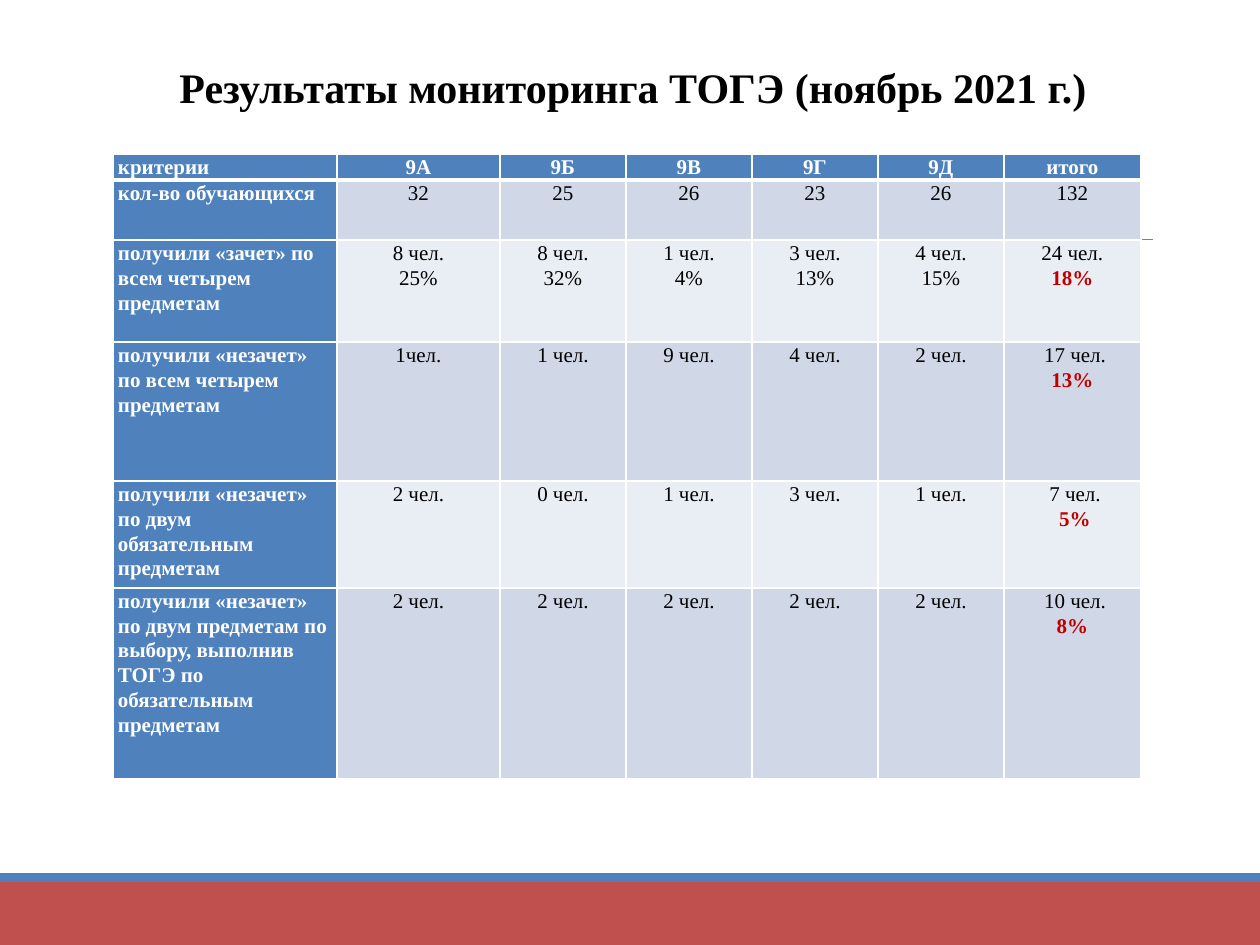
from lxml import etree
from pptx import Presentation
from pptx import util as u
from pptx.dml.color import RGBColor
from pptx.enum import shapes, text
from pptx.oxml.ns import qn

PX = 914400 / 126
FONT = "Times New Roman"
BLACK = RGBColor(0, 0, 0)
WHITE = RGBColor(255, 255, 255)
BLUE = RGBColor(0x4F, 0x81, 0xBD)
BRICK = RGBColor(0xC0, 0x50, 0x4D)
RED = RGBColor(0xC0, 0, 0)
GREY = RGBColor(0x80, 0x80, 0x80)
BANDS = [RGBColor(0xE9, 0xED, 0xF4), RGBColor(0xD0, 0xD8, 0xE8)]


def px(*lengths):
    return [u.Emu(round(n * PX)) for n in lengths]


def write(p, words, size=12, color=BLACK, bold=False, align=text.PP_ALIGN.CENTER, spacing=1.07):
    p.alignment = align
    p.line_spacing = spacing
    r = p.add_run()
    r.text = words
    r.font.name, r.font.size, r.font.bold = FONT, u.Pt(size), bold
    r.font.color.rgb = color


prs = Presentation()
prs.slide_width, prs.slide_height = px(1260, 945)
s = prs.slides.add_slide(prs.slide_layouts[5])

# Footer bars and the thin rule behind the table
for top, height, color in [(882, 63, BRICK), (873, 9, BLUE)]:
    bar = s.shapes.add_shape(shapes.MSO_SHAPE.RECTANGLE, *px(0, top, 1260, height))
    bar.shadow.inherit = False
    bar.fill.solid()
    bar.fill.fore_color.rgb = color
    bar.line.fill.background()

rule = s.shapes.add_connector(shapes.MSO_CONNECTOR.STRAIGHT, *px(123, 239, 1153, 239))
rule.line.color.rgb = GREY
rule.line.width = u.Pt(0.5)
etree.SubElement(rule._element.spPr, qn("a:effectLst"))

# Title
title = s.shapes.title
title.left, title.top, title.width, title.height = px(113, 39, 1040, 101)
tf = title.text_frame
tf.word_wrap = True
tf.vertical_anchor = text.MSO_ANCHOR.MIDDLE
tf.margin_left = tf.margin_right = tf.margin_top = tf.margin_bottom = 0
write(tf.paragraphs[0], "Результаты мониторинга ТОГЭ (ноябрь 2021 г.)", size=24, bold=True, spacing=0.9)

# Results table: a line break in a cell starts a new paragraph
rows = [
    ["критерии", "9А", "9Б", "9В", "9Г", "9Д", "итого"],
    ["кол-во обучающихся", "32", "25", "26", "23", "26", "132"],
    ["получили «зачет» по всем четырем предметам",
     "8 чел.\n25%", "8 чел.\n32%", "1 чел.\n4%", "3 чел.\n13%", "4 чел.\n15%", "24 чел.\n18%"],
    ["получили «незачет» по всем четырем предметам",
     "1чел.", "1 чел.", "9 чел.", "4 чел.", "2 чел.", " 17 чел.\n13%"],
    ["получили «незачет» по двум обязательным предметам",
     "2 чел.", "0 чел.", "1 чел.", "3 чел.", "1 чел.", " 7 чел.\n 5%"],
    ["получили «незачет» по двум предметам по выбору, выполнив ТОГЭ по обязательным предметам",
     "2 чел.", "2 чел.", "2 чел.", "2 чел.", "2 чел.", " 10 чел.\n8%"],
]
widths = px(224, 163, 126, 126, 126, 126, 137)
heights = px(26, 60, 102, 139, 107, 191)
table = s.shapes.add_table(len(rows), len(widths), *px(113, 154), sum(widths), sum(heights)).table
for column, width in zip(table.columns, widths):
    column.width = width
for row, height in zip(table.rows, heights):
    row.height = height

for i, row in enumerate(rows):
    for j, words in enumerate(row):
        cell = table.cell(i, j)
        cell.margin_left = cell.margin_right = px(5)[0]
        cell.margin_top = cell.margin_bottom = 0
        for side in "LRTB":
            thick = (i, side) in [(0, "B"), (1, "T")]
            ln = etree.SubElement(cell._tc.get_or_add_tcPr(), qn(f"a:ln{side}"), w=str(u.Pt(3 if thick else 1)))
            fill = etree.SubElement(ln, qn("a:solidFill"))
            etree.SubElement(fill, qn("a:srgbClr"), val=str(WHITE))
        heading = i == 0 or j == 0
        cell.fill.solid()
        cell.fill.fore_color.rgb = BLUE if heading else BANDS[i % 2]
        tf = cell.text_frame
        for n, line in enumerate(words.split("\n")):
            p = tf.add_paragraph() if n else tf.paragraphs[0]
            share = n == 1 and j == len(row) - 1
            write(p, line, color=WHITE if heading else RED if share else BLACK, bold=heading or share,
                  align=text.PP_ALIGN.CENTER if j else text.PP_ALIGN.LEFT)

prs.save("out.pptx")
